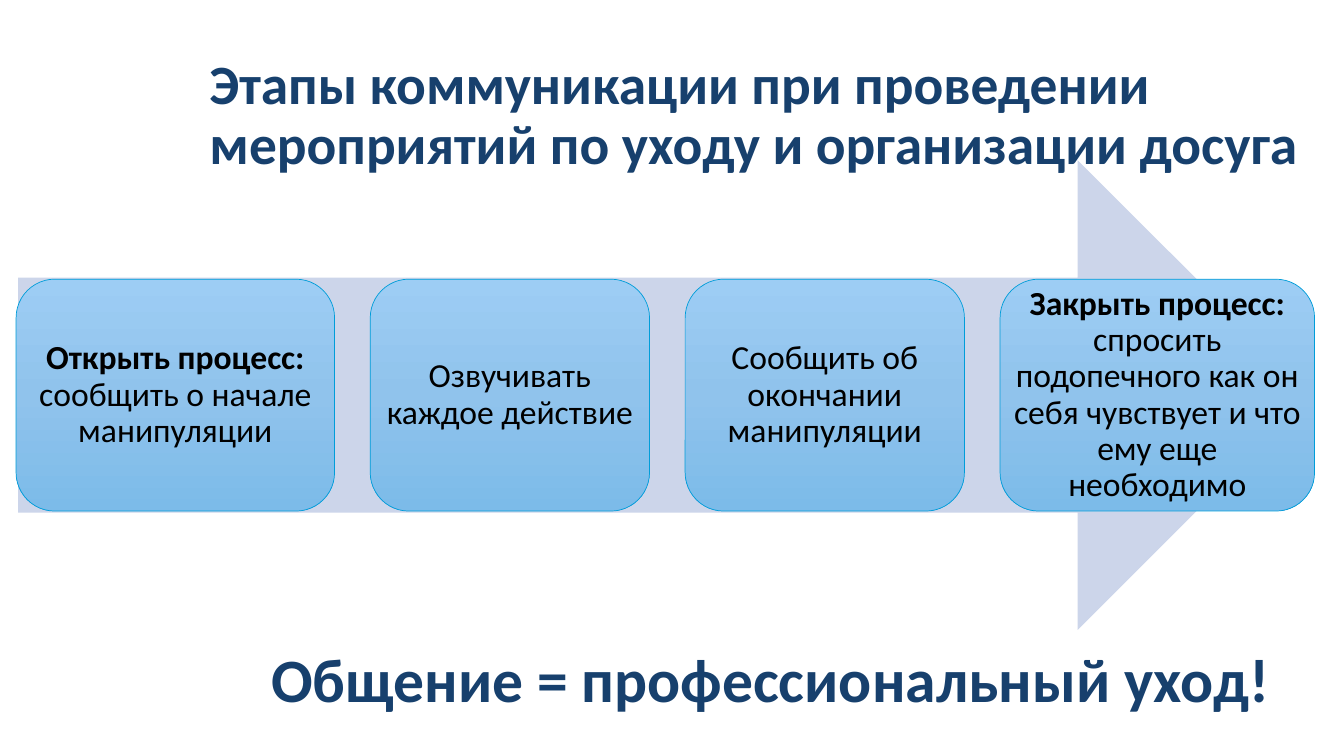
"""Build a slide with the four stages of communication during care."""
from copy import deepcopy

from pptx import Presentation
from pptx.dml.color import RGBColor
from pptx.enum.shapes import MSO_SHAPE
from pptx.enum.text import MSO_ANCHOR, PP_ALIGN
from pptx.oxml.ns import qn
from pptx.util import Inches, Pt

ARROW = MSO_SHAPE.RIGHT_ARROW
ROUNDED = MSO_SHAPE.ROUNDED_RECTANGLE
MIDDLE = MSO_ANCHOR.MIDDLE
LEFT, CENTER = PP_ALIGN.LEFT, PP_ALIGN.CENTER

WIDTH, HEIGHT = Inches(13.33), Inches(7.5)
FONT = "Calibri"
NAVY, BLACK, PALE, CYAN = "17406D", "000000", "CCD5EA", "009DD9"
STAGE_GRADIENT = ((0, "9DCDF4"), (0.5, "90C3EC"), (1, "7CBBE9"))
STAGE_LEFT, STAGE_TOP, STAGE_HEIGHT, STAGE_GAP = 1.2, 36.93, 30.67, 2.65
STAGES = (
    (23.7, "Открыть процесс: ", "сообщить о начале манипуляции"),
    (20.78, "", "Озвучивать каждое действие"),
    (20.78, "", "Сообщить об окончании манипуляции"),
    (23.4, "Закрыть процесс: ",
     "спросить подопечного как он себя чувствует и что ему еще необходимо"),
)


def color(value):
    """Turn a hex string into a colour."""
    return RGBColor.from_string(value)


def place(left, top, width, height):
    """Turn percentages of the slide into lengths."""
    return (int(WIDTH * left / 100), int(HEIGHT * top / 100),
            int(WIDTH * width / 100), int(HEIGHT * height / 100))


def add_span(para, text, *, size, ink, bold=False):
    """Append formatted text to a paragraph."""
    span = para.add_run()
    span.text = text
    span.font.name = FONT
    span.font.size = Pt(size)
    span.font.bold = bold
    span.font.color.rgb = color(ink)


def prepare_para(box, align):
    """Set up wrapped, vertically centred text and return its paragraph."""
    frame = box.text_frame
    frame.word_wrap = True
    frame.vertical_anchor = MIDDLE
    para = frame.paragraphs[0]
    para.alignment = align
    para.line_spacing = 0.9
    return para


def add_heading(page, text, area, size):
    """Add a bold navy line of text."""
    box = page.shapes.add_textbox(*place(*area))
    add_span(prepare_para(box, LEFT), text, size=size, ink=NAVY, bold=True)


def add_arrow(page, area):
    """Add the pale arrow behind the stages."""
    arrow = page.shapes.add_shape(ARROW, *place(*area))
    arrow.shadow.inherit = False
    arrow.fill.solid()
    arrow.fill.fore_color.rgb = color(PALE)
    arrow.line.fill.background()


def fill_gradient(box, stops):
    """Fill a shape with a three-stop gradient from top to bottom."""
    box.fill.gradient()
    box.fill.gradient_angle = 270
    first = box.fill._xPr.find(".//" + qn("a:gs"))
    first.addnext(deepcopy(first))
    for stop, (position, value) in zip(box.fill.gradient_stops, stops):
        stop.position = position
        stop.color.rgb = color(value)


def add_stage(page, area, lead, text):
    """Add a rounded box with an optional bold lead."""
    box = page.shapes.add_shape(ROUNDED, *place(*area))
    box.shadow.inherit = False
    fill_gradient(box, STAGE_GRADIENT)
    box.line.color.rgb = color(CYAN)
    box.line.width = Pt(0.5)
    frame = box.text_frame
    frame.margin_left = frame.margin_right = 0
    frame.margin_top = frame.margin_bottom = 0
    para = prepare_para(box, CENTER)
    if lead:
        add_span(para, lead, size=24, ink=BLACK, bold=True)
    add_span(para, text, size=24, ink=BLACK)


def add_stages(page):
    """Add the stages in a row with equal gaps."""
    left = STAGE_LEFT
    for width, lead, text in STAGES:
        add_stage(page, (left, STAGE_TOP, width, STAGE_HEIGHT), lead, text)
        left += width + STAGE_GAP


def main():
    """Build and save the deck."""
    deck = Presentation()
    deck.slide_width, deck.slide_height = WIDTH, HEIGHT
    page = deck.slides.add_slide(deck.slide_layouts[6])
    add_heading(
        page,
        "Этапы коммуникации при проведении мероприятий по уходу и организации досуга",
        (14.85, 5.47, 85.15, 20), 39.6)
    add_arrow(page, (1.35, 21.2, 96.32, 62.13))
    add_stages(page)
    add_heading(page, "Общение = профессиональный уход!",
                (19.43, 80.67, 80.57, 19.33), 44)
    deck.save("out.pptx")


if __name__ == "__main__":
    main()
